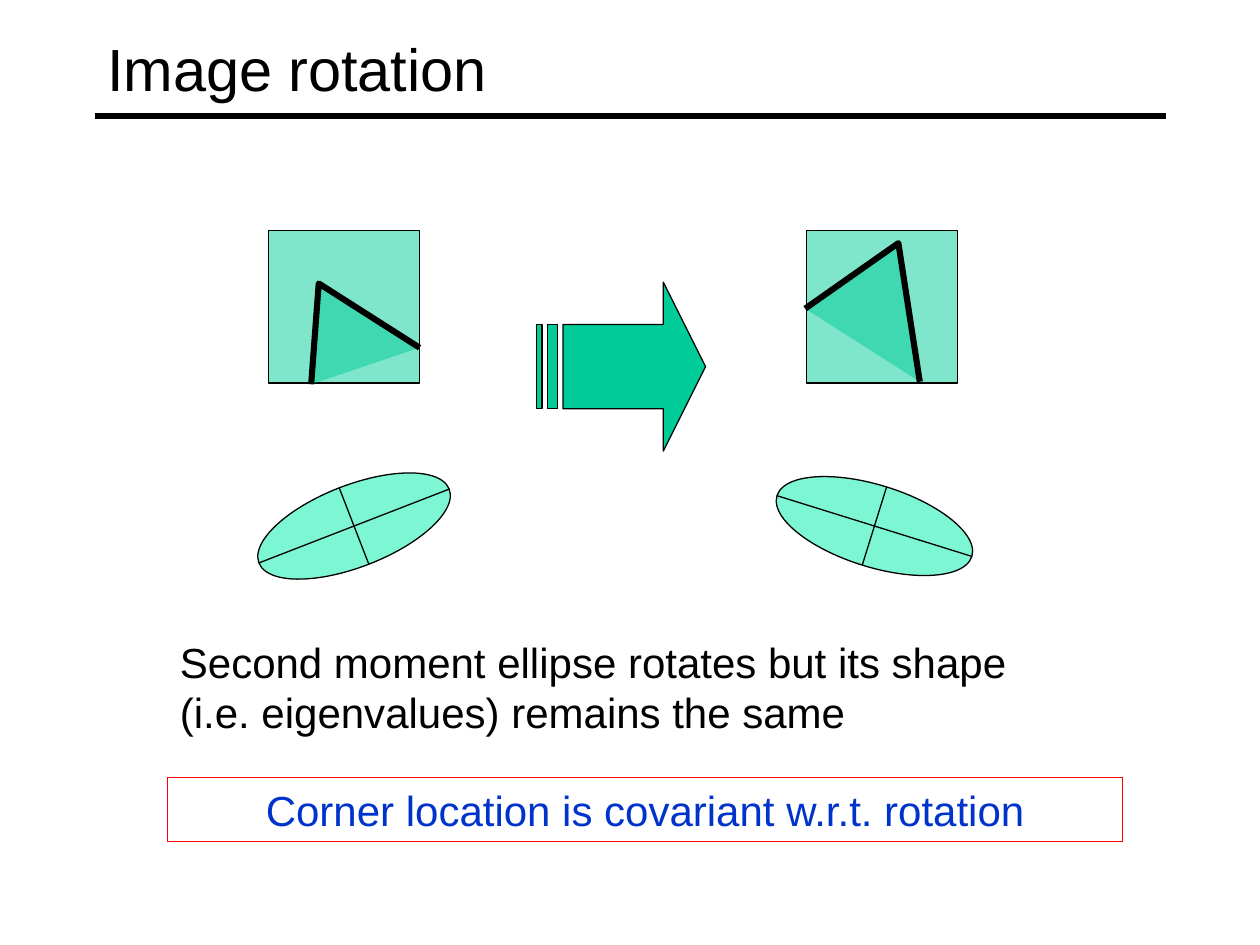
"""Build the slide on image rotation and the second moment ellipse."""
from math import cos, radians, sin

from lxml import etree
from pptx import Presentation
from pptx import util as u
from pptx.dml.color import RGBColor
from pptx.enum import shapes as sh, text as tx
from pptx.oxml.ns import qn

BLACK = RGBColor(0, 0, 0)
GREEN = RGBColor(0, 0xCC, 0x99)
MINT = RGBColor(0x7C, 0xF6, 0xD3)
RED = RGBColor(0xFF, 0, 0)
BLUE = RGBColor(0, 0x33, 0xCC)


def inch(*nums):
    return [u.Inches(n) for n in nums]


def paint(shape, fill=None, edge=BLACK, width=0.75, alpha=None):
    shape.shadow.inherit = False
    shape.line.color.rgb = edge
    shape.line.width = u.Pt(width)
    if fill is None:
        shape.fill.background()
        return
    shape.fill.solid()
    shape.fill.fore_color.rgb = fill
    if alpha:
        tint = shape._element.spPr.find(qn("a:solidFill"))[0]
        etree.SubElement(tint, qn("a:alpha")).set("val", str(alpha * 1000))


def write(shape, words, size=24, color=BLACK, align=tx.PP_ALIGN.LEFT,
          anchor=tx.MSO_ANCHOR.TOP):
    frame = shape.text_frame
    frame.text = words
    frame.word_wrap = True
    frame.vertical_anchor = anchor
    frame.margin_left = frame.margin_right = u.Inches(0.1)
    frame.margin_top = frame.margin_bottom = u.Inches(0.05)
    para = frame.paragraphs[0]
    para.alignment = align
    font = para.runs[0].font
    font.name, font.size = "Arial", u.Pt(size)
    font.color.rgb = color


def add_form(slide, kind, box, fill=None, **style):
    shape = slide.shapes.add_shape(kind, *inch(*box))
    paint(shape, fill, **style)
    return shape


def add_line(slide, start, end, width=0.75):
    line = slide.shapes.add_connector(
        sh.MSO_CONNECTOR.STRAIGHT, *inch(*start, *end))
    line.line.color.rgb = BLACK
    line.line.width = u.Pt(width)
    etree.SubElement(line._element.spPr, qn("a:effectLst"))


def add_corner(slide, left, points):
    add_form(slide, sh.MSO_SHAPE.RECTANGLE, (left, 1.83, 1.2, 1.21),
             GREEN, alpha=50)
    first, *rest = [inch(*point) for point in points]
    pen = slide.shapes.build_freeform(*first)
    pen.add_line_segments(rest, close=False)
    wedge = pen.convert_to_shape()
    paint(wedge, GREEN, width=3.5, alpha=50)
    etree.SubElement(wedge._element.spPr.find(qn("a:ln")), qn("a:round"))


def add_ellipse(slide, left, angle):
    top, wide, high = 3.85, 1.62, 0.65
    oval = add_form(slide, sh.MSO_SHAPE.OVAL, (left, top, wide, high), MINT)
    oval.rotation = angle
    x, y = left + wide / 2, top + high / 2
    for size, turn in ((wide, angle), (high, angle + 90)):
        dx = size / 2 * cos(radians(turn))
        dy = size / 2 * sin(radians(turn))
        add_line(slide, (x - dx, y - dy), (x + dx, y + dy))


def add_title(slide, words):
    title = slide.shapes.title
    title.left, title.top, title.width, title.height = inch(
        0.75, 0.08, 8.5, 0.92)
    write(title, words, 34, anchor=tx.MSO_ANCHOR.MIDDLE)
    add_line(slide, (0.75, 0.92), (9.25, 0.92), 3)


def main():
    deck = Presentation()
    deck.slide_width, deck.slide_height = inch(10, 7.5)
    slide = deck.slides.add_slide(deck.slide_layouts[5])
    add_title(slide, "Image rotation")
    note = slide.shapes.add_textbox(*inch(1.33, 5, 7.33, 0.91))
    write(note, "Second moment ellipse rotates but its shape "
                "(i.e. eigenvalues) remains the same")
    add_corner(slide, 2.13, [(2.47, 3.05), (2.53, 2.25), (3.33, 2.76)])
    add_corner(slide, 6.4, [(6.39, 2.45), (7.13, 1.93), (7.3, 3.03)])
    arrow = add_form(slide, sh.MSO_SHAPE.STRIPED_RIGHT_ARROW,
                     (4.26, 2.24, 1.34, 1.34), GREEN)
    arrow.adjustments[0], arrow.adjustments[1] = 0.5, 0.25
    add_ellipse(slide, 2, 338.8)
    add_ellipse(slide, 6.13, 17.3)
    claim = add_form(slide, sh.MSO_SHAPE.RECTANGLE,
                     (1.33, 6.17, 7.58, 0.51), edge=RED)
    write(claim, "Corner location is covariant w.r.t. rotation", color=BLUE,
          align=tx.PP_ALIGN.CENTER, anchor=tx.MSO_ANCHOR.MIDDLE)
    deck.save("out.pptx")


if __name__ == "__main__":
    main()
